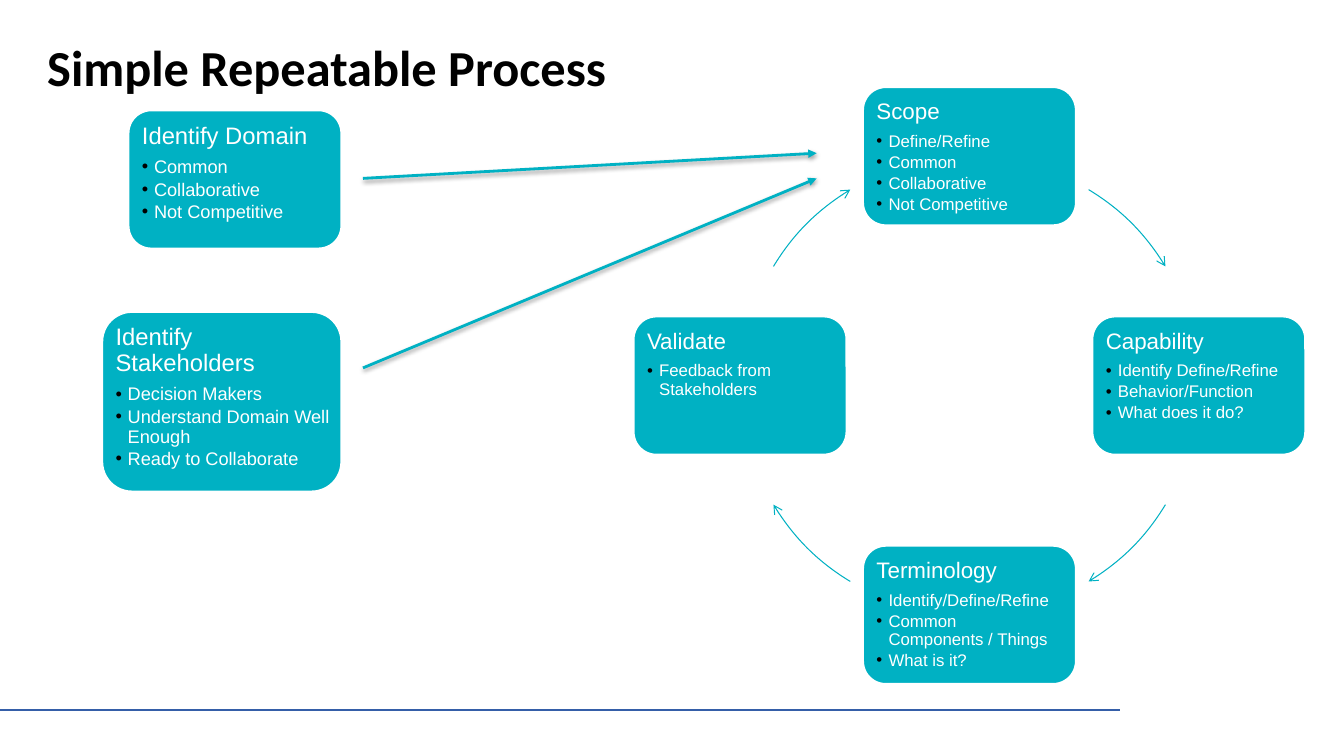
from lxml import etree
from pptx import Presentation
from pptx.dml.color import RGBColor
from pptx.enum.shapes import MSO_CONNECTOR, MSO_SHAPE
from pptx.enum.text import MSO_ANCHOR, PP_ALIGN
from pptx.oxml.ns import qn
from pptx.util import Emu, Pt

PX = 9144  # 100 px to the inch
COLORS = {"teal": "00B1C3", "white": "FFFFFF", "black": "000000", "rule": "355EA8"}
CARD_W, CARD_H = 212, 138
ARC_HALF_SPAN = 13.7
STAGES = [
    ("Scope", ["Define/Refine", "Common", "Collaborative", "Not Competitive"]),
    ("Capability", ["Identify Define/Refine", "Behavior/Function", "What does it do?"]),
    ("Terminology", ["Identify/Define/Refine", "Common Components / Things", "What is it?"]),
    ("Validate", ["Feedback from Stakeholders"]),
]
DIRECTIONS = [(0, -1), (1, 0), (0, 1), (-1, 0)]
INPUTS = [
    ((127, 109, CARD_W, CARD_H), (7, 7, 7, 7), "Identify Domain",
     ["Common", "Collaborative", "Not Competitive"]),
    ((101, 309, 238, 179), (5, 5, 0, 5), "Identify Stakeholders",
     ["Decision Makers", "Understand Domain Well Enough", "Ready to Collaborate"]),
]
INPUT_ARROWS = [(360, 177, 810, 152), (360, 365, 810, 177)]


def px(*lengths):
    return [Emu(round(length * PX)) for length in lengths]


def rgb(name):
    return RGBColor.from_string(COLORS[name])


def add_xml(parent, tag, **attributes):
    return etree.SubElement(parent, qn(tag), attributes)


def set_frame(frame, insets, anchor):
    left, top, right, bottom = px(*insets)
    settings = {"word_wrap": True, "vertical_anchor": anchor, "margin_left": left,
                "margin_top": top, "margin_right": right, "margin_bottom": bottom}
    for name, value in settings.items():
        setattr(frame, name, value)


def write(paragraph, text, color, after=0, **font):
    paragraph.text = text
    paragraph.alignment = PP_ALIGN.LEFT
    paragraph.line_spacing = 0.9
    paragraph.space_after = Pt(after)
    for name, value in font.items():
        setattr(paragraph.font, name, value)
    paragraph.font.color.rgb = rgb(color)


def add_bullet(paragraph):
    props = paragraph._p.get_or_add_pPr()
    indent = px(12)[0]
    props.set("marL", str(indent))
    props.set("indent", str(-indent))
    add_xml(add_xml(props, "a:buClr"), "a:srgbClr", val=COLORS["black"])
    add_xml(props, "a:buFont", typeface="Arial")
    add_xml(props, "a:buChar", char="•")


def add_arrowhead(shape, kind):
    add_xml(shape.element.spPr.find(qn("a:ln")), "a:tailEnd", type=kind)


def add_line(slide, ends, color, width):
    line = slide.shapes.add_connector(MSO_CONNECTOR.STRAIGHT, *px(*ends))
    line.line.color.rgb = rgb(color)
    line.line.width = Pt(width)
    return line, add_xml(line.element.spPr, "a:effectLst")


def add_title(slide, box):
    frame = slide.shapes.add_textbox(*px(*box)).text_frame
    set_frame(frame, (10, 5, 10, 5), MSO_ANCHOR.MIDDLE)
    write(frame.paragraphs[0], "Simple Repeatable Process", "black",
          name="Calibri", size=Pt(36), bold=True)


def add_card(slide, box, insets, heading, items, heading_size, item_size):
    card = slide.shapes.add_shape(MSO_SHAPE.ROUNDED_RECTANGLE, *px(*box))
    card.shadow.inherit = False
    card.fill.solid()
    card.fill.fore_color.rgb = rgb("teal")
    card.line.color.rgb = rgb("white")
    card.line.width = Pt(2)
    frame = card.text_frame
    set_frame(frame, insets, MSO_ANCHOR.TOP)
    write(frame.paragraphs[0], heading, "white", 6, name="Arial", size=Pt(heading_size))
    for item in items:
        paragraph = frame.add_paragraph()
        add_bullet(paragraph)
        write(paragraph, item, "white", 2, name="Arial", size=Pt(item_size))


def add_cycle_arrow(slide, box, middle):
    """Draw the arc of the circle in box that is centred on an angle in degrees."""
    arc = slide.shapes.add_shape(MSO_SHAPE.ARC, *px(*box))
    arc.shadow.inherit = False
    arc.fill.background()
    # Angles are 60000ths of a degree; adjustments count in 100000ths.
    for index, angle in enumerate((middle - ARC_HALF_SPAN, middle + ARC_HALF_SPAN)):
        arc.adjustments[index] = angle * 0.6
    arc.line.color.rgb = rgb("teal")
    arc.line.width = Pt(0.75)
    add_arrowhead(arc, "arrow")


def add_cycle(slide, box):
    """Place the stages clockwise on the circle in box, an arrow after each."""
    left, top, width, height = box
    for index, ((heading, items), (dx, dy)) in enumerate(zip(STAGES, DIRECTIONS)):
        x = left + (width * (1 + dx) - CARD_W) / 2
        y = top + (height * (1 + dy) - CARD_H) / 2
        add_card(slide, (x, y, CARD_W, CARD_H), (7, 7, 7, 7), heading, items, 16, 12)
        add_cycle_arrow(slide, box, (315 + 90 * index) % 360)


def add_inputs(slide):
    for box, insets, heading, items in INPUTS:
        add_card(slide, box, insets, heading, items, 17, 13)
    for ends in INPUT_ARROWS:
        arrow, effects = add_line(slide, ends, "teal", 2)
        add_arrowhead(arrow, "triangle")
        shadow = add_xml(effects, "a:outerShdw", blurRad=str(Pt(3.1)), dist=str(Pt(1.6)),
                         dir="5400000", rotWithShape="0")
        tint = add_xml(shadow, "a:srgbClr", val=COLORS["black"])
        add_xml(tint, "a:alpha", val="38000")


def main():
    deck = Presentation()
    deck.slide_width, deck.slide_height = px(1333, 750)
    slide = deck.slides.add_slide(deck.slide_layouts[6])
    add_line(slide, (0, 704, 1111, 704), "rule", 1.5)
    add_title(slide, (37, 36, 1058, 67))
    add_cycle(slide, (734, 155, 455, 455))
    add_inputs(slide)
    deck.save("out.pptx")


if __name__ == "__main__":
    main()
